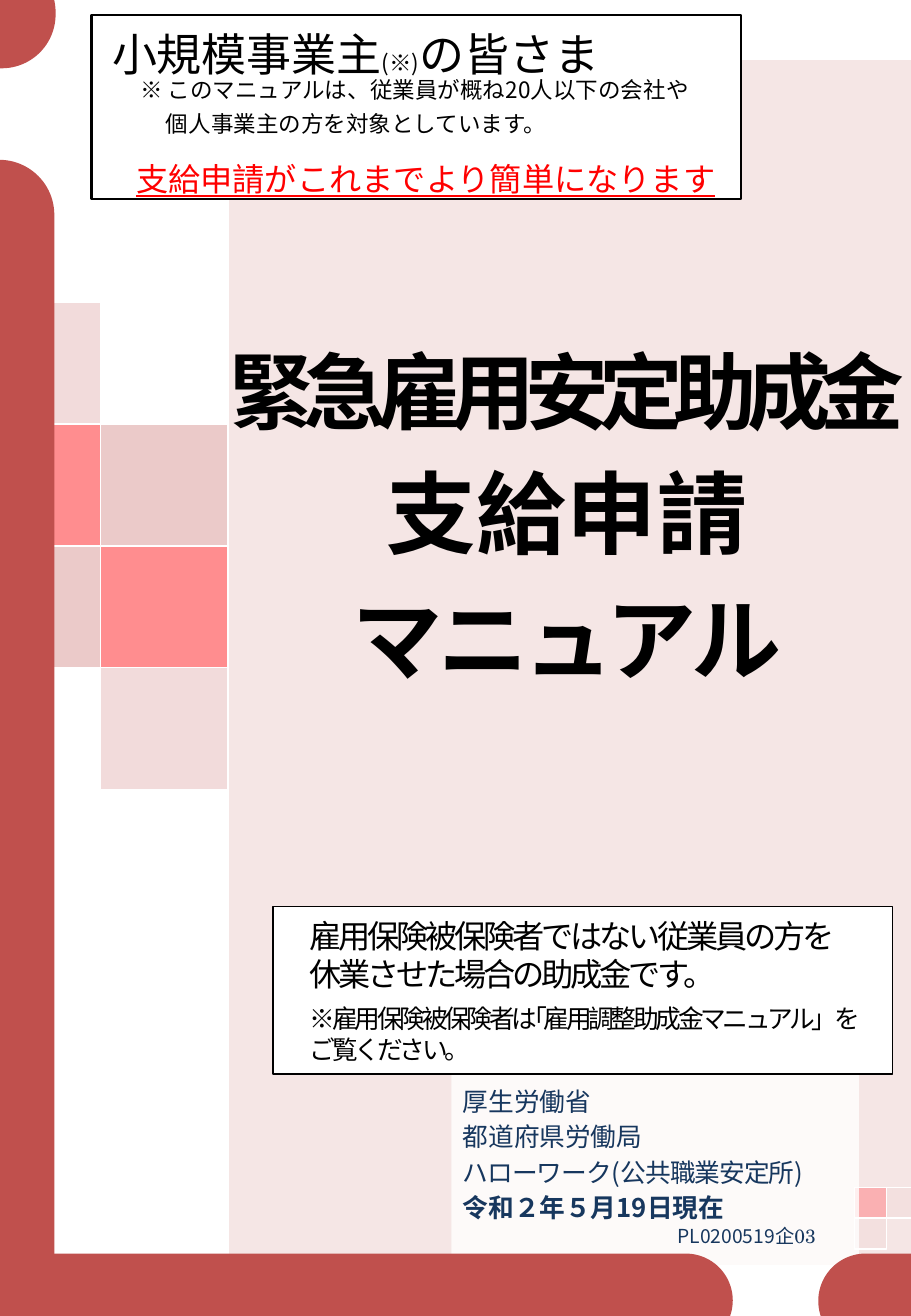
from lxml.etree import SubElement
from pptx import Presentation
from pptx.dml.color import RGBColor
from pptx.enum.shapes import MSO_SHAPE
from pptx.enum.text import MSO_ANCHOR, PP_ALIGN
from pptx.oxml.ns import qn
from pptx.util import Pt

PAGE = (566.64, 818.64)
GOTHIC, SERIF = "Noto Sans CJK JP", "TeX Gyre Schola"

WHITE = RGBColor(0xFF, 0xFF, 0xFF)
BLACK = RGBColor(0, 0, 0)
RED = RGBColor(0xFF, 0, 0)
NAVY = RGBColor(0x17, 0x37, 0x5E)
BRICK = RGBColor(0xC0, 0x50, 0x4D)
BLUSH = RGBColor(0xF2, 0xDC, 0xDB)
ROSE = RGBColor(0xE6, 0xB9, 0xB8)
DUSTY = RGBColor(0xD9, 0x96, 0x94)
CORAL = RGBColor(0xFF, 0x71, 0x74)
SALMON = RGBColor(0xFF, 0x7C, 0x80)

# Boxes are left, top, width, height
PAPER = (-15.8, 36.7, 587.5, 751)
PANEL = (141.8, 36.7, 449.3, 751)
FRAME = [
    (-34.6, 99.4, 68.4, 750.2),
    (-32.4, -25.9, 67, 68.4),
    (-62.6, 779.8, 518.4, 58.3),
    (509, 779.8, 112.3, 59),
]

# Tiles are column, row, colour, opacity in percent
LARGE_GRID = (-16.6, 187.9, 79.2, 75.8)
LARGE_TILES = [
    (1, 2, CORAL, 80), (1, 1, DUSTY, 50), (0, 1, CORAL, 80),
    (0, 0, ROSE, 50), (0, 2, DUSTY, 50), (1, 3, ROSE, 50),
]
SMALL_GRID = (531.4, 738.7, 20.1, 19.1)
SMALL_TILES = [(0, 1, BLUSH, 50), (0, 0, SALMON, 50), (1, 0, BLUSH, 50)]

# A paragraph is its runs (text, format) and its own format
ISSUER_BOX = (280.8, 658.8, 253.4, 128.2)
ISSUER_LINES = [
    ("厚生労働省", {}),
    ("都道府県労働局", {}),
    ("ハローワーク(公共職業安定所)", {"tracking": -0.6}),
    ("令和２年５月19日現在", {"bold": True}),
]
ISSUER = [([(line, {"size": 16, "color": NAVY, **style})],
           {"align": PP_ALIGN.JUSTIFY, "leading": 22}) for line, style in ISSUER_LINES]

CODE_BOX = (388.8, 758.9, 138.2, 29.5)
CODE = [([("PL0200519", {"size": 12, "color": NAVY}),
          ("企03", {"size": 12, "color": NAVY, "font": SERIF})],
         {"align": PP_ALIGN.RIGHT})]

TITLE_BOX = (123.8, 204.5, 457.9, 310.3)
TITLE_LINES = [("緊急雇用安定助成金", 52, -6), ("支給申請", 56, 0), ("マニュアル", 56, -3)]
TITLE = [([(line, {"size": size, "tracking": tracking, "bold": True})],
          {"align": PP_ALIGN.CENTER, "leading": 66, "before": 6, "after": 6})
         for line, size, tracking in TITLE_LINES]

SCOPE_BOX = (169.9, 563.8, 385.2, 104.4)
SCOPE = [
    ([("雇用保険被保険者ではない従業員の方を", {"size": 20, "tracking": -2})], {}),
    ([("休業させた場合の助成金です。", {"size": 20, "tracking": -2})], {}),
    ([("※雇用保険被保険者は｢雇用調整助成金マニュアル」をご覧ください。",
       {"size": 16, "tracking": -2})], {"before": 6}),
]

AUDIENCE_BOX = (56.9, 9.4, 403.9, 114.5)
NOTE = {"align": PP_ALIGN.JUSTIFY, "leading": 14, "after": 7}
AUDIENCE = [
    ([("小規模事業主", {"size": 28}), ("(※)", {"size": 14}), ("の皆さま", {"size": 28})],
     {"align": PP_ALIGN.JUSTIFY, "leading": 37.5, "indent": 7}),
    ([("※ このマニュアルは、従業員が概ね20人以下の会社や", {"size": 14})],
     {**NOTE, "indent": 24.5}),
    ([("個人事業主の方を対象としています。", {"size": 14})], {**NOTE, "indent": 40.5}),
    ([("支給申請がこれまでより簡単になります",
       {"size": 20, "color": RED, "underline": True})],
     {"align": PP_ALIGN.JUSTIFY, "leading": 25, "before": 6, "indent": 22}),
]


def add_block(slide, box, fill, opacity=100, line=None, line_width=1,
              kind=MSO_SHAPE.RECTANGLE):
    block = slide.shapes.add_shape(kind, *map(Pt, box))
    block.shadow.inherit = False
    block.fill.solid()
    block.fill.fore_color.rgb = fill
    if opacity < 100:
        color = block.fill._xPr.find(qn("a:solidFill"))[0]
        SubElement(color, qn("a:alpha"), val=str(opacity * 1000))
    if line is None:
        block.line.fill.background()
    else:
        block.line.color.rgb = line
        block.line.width = Pt(line_width)
    return block


def add_run(paragraph, text, size, color=BLACK, bold=False, underline=False,
            tracking=0, font=GOTHIC):
    run = paragraph.add_run()
    run.text = text
    run.font.size = Pt(size)
    run.font.bold = bold
    run.font.underline = underline
    run.font.color.rgb = color
    run.font.name = font
    properties = run.font._element
    SubElement(properties, qn("a:ea"), typeface=GOTHIC)
    if tracking:
        properties.set("spc", str(round(tracking * 100)))


def write(holder, paragraphs, anchor=MSO_ANCHOR.TOP, insets=(7.2, 3.6, 7.2, 3.6)):
    """Fill a shape with paragraphs; insets are left, top, right, bottom."""
    frame = holder.text_frame
    frame.word_wrap = True
    frame.vertical_anchor = anchor
    (frame.margin_left, frame.margin_top,
     frame.margin_right, frame.margin_bottom) = map(Pt, insets)
    for index, (runs, layout) in enumerate(paragraphs):
        paragraph = frame.add_paragraph() if index else frame.paragraphs[0]
        paragraph.alignment = layout.get("align", PP_ALIGN.LEFT)
        paragraph.space_before = Pt(layout.get("before", 0))
        paragraph.space_after = Pt(layout.get("after", 0))
        if "leading" in layout:
            paragraph.line_spacing = Pt(layout["leading"])
        if "indent" in layout:
            paragraph._p.get_or_add_pPr().set("marL", str(Pt(layout["indent"])))
        for text, style in runs:
            add_run(paragraph, text, **style)


def add_tiles(slide, grid, tiles):
    left, top, width, height = grid
    for column, row, color, opacity in tiles:
        box = (left + column * width, top + row * height, width, height)
        add_block(slide, box, color, opacity, line=WHITE)


def main():
    deck = Presentation()
    deck.slide_width, deck.slide_height = map(Pt, PAGE)
    cover = deck.slides.add_slide(deck.slide_layouts[6])

    add_block(cover, PAPER, WHITE, line=WHITE)
    add_block(cover, PANEL, BLUSH, 70, line=WHITE)
    add_tiles(cover, LARGE_GRID, LARGE_TILES)
    add_tiles(cover, SMALL_GRID, SMALL_TILES)

    write(add_block(cover, ISSUER_BOX, WHITE, 80), ISSUER,
          MSO_ANCHOR.BOTTOM, (7.2, 0, 7.2, 26.5))
    write(cover.shapes.add_textbox(*map(Pt, CODE_BOX)), CODE,
          MSO_ANCHOR.BOTTOM, (7.2, 0, 19.6, 12.5))
    write(cover.shapes.add_textbox(*map(Pt, TITLE_BOX)), TITLE)
    write(add_block(cover, SCOPE_BOX, WHITE, line=BLACK), SCOPE,
          MSO_ANCHOR.MIDDLE, (22.9, 0.7, 17.3, 0.7))
    write(add_block(cover, AUDIENCE_BOX, WHITE, line=BLACK, line_width=1.5), AUDIENCE,
          MSO_ANCHOR.MIDDLE, (5.8, 2.9, 5.8, 0.7))

    for box in FRAME:
        bar = add_block(cover, box, BRICK, kind=MSO_SHAPE.ROUNDED_RECTANGLE)
        bar.adjustments[0] = 0.5

    deck.save("out.pptx")


if __name__ == "__main__":
    main()
